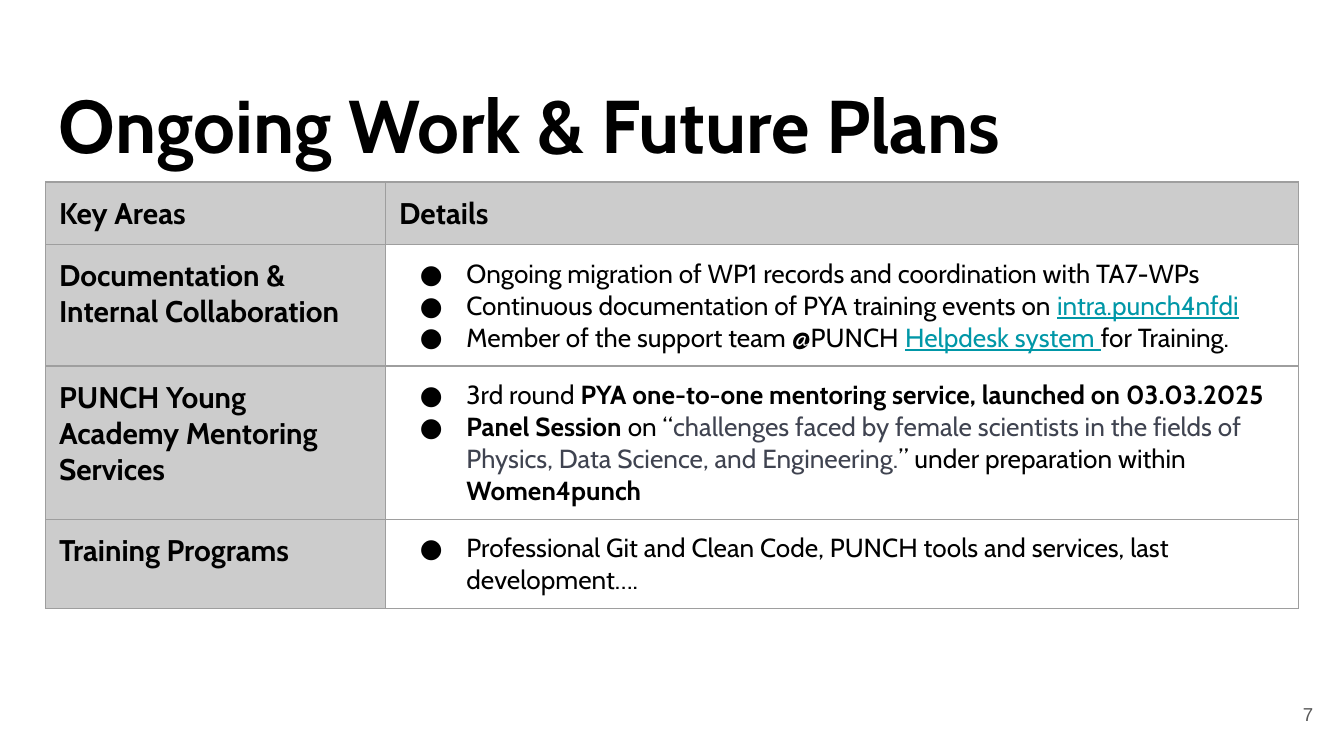
from lxml import etree
from pptx import Presentation
from pptx.dml.color import RGBColor
from pptx.enum.text import MSO_ANCHOR, PP_ALIGN
from pptx.oxml.ns import qn
from pptx.util import Pt

TOP, MIDDLE = MSO_ANCHOR.TOP, MSO_ANCHOR.MIDDLE
LEFT, RIGHT = PP_ALIGN.LEFT, PP_ALIGN.RIGHT
FONT, BLACK, GREY, TEAL, SLATE = "Cabin", "000000", "CCCCCC", "0097A7", "3F4350"
BORDER = "9E9E9E"
INSET = 7.2
BOLD = {"bold": True}
LINK = {"color": TEAL, "underline": True}
COLUMNS = [182.2, 488.9]
ROWS = [
    (33.5, "Key Areas", "Details"),
    (65, "Documentation & Internal Collaboration", [
        [("Ongoing migration of WP1 records and coordination with TA7-WPs", {})],
        [("Continuous documentation of PYA training events on ", {}),
         ("intra.punch4nfdi", LINK)],
        [("Member of the support team @PUNCH ", {}),
         ("Helpdesk system ", LINK),
         ("for Training.", {})],
    ]),
    (82, "PUNCH Young Academy Mentoring Services", [
        [("3rd round ", {}),
         ("PYA one-to-one mentoring service, launched on 03.03.2025", BOLD)],
        [("Panel Session", BOLD),
         (" on “", {}),
         ("challenges faced by female scientists in the fields of Physics, "
          "Data Science, and Engineering.", {"color": SLATE}),
         ("” under preparation within ", {}),
         ("Women4punch", BOLD)],
    ]),
    (48, "Training Programs", [
        [("Professional Git and Clean Code, PUNCH tools and services, "
          "last development….", {})],
    ]),
]


def rgb(value):
    """Return the colour for a hex string."""
    return RGBColor.from_string(value)


def add_run(p, text, size=14, color=BLACK, bold=False, underline=False, font=FONT):
    """Add formatted text to a paragraph."""
    r = p.add_run()
    r.text = text
    r.font.name, r.font.size = font, Pt(size)
    r.font.bold, r.font.underline = bold, underline
    r.font.color.rgb = rgb(color)


def add_text(s, box, text, anchor=TOP, align=LEFT, **fmt):
    """Add a one-paragraph text box."""
    tf = s.shapes.add_textbox(*map(Pt, box)).text_frame
    tf.word_wrap = True
    tf.vertical_anchor = anchor
    tf.margin_left = tf.margin_right = tf.margin_top = tf.margin_bottom = Pt(INSET)
    p = tf.paragraphs[0]
    p.alignment = align
    add_run(p, text, **fmt)


def add_bullet(p):
    """Give a paragraph a hanging round bullet."""
    pPr = p._p.get_or_add_pPr()
    pPr.set("marL", str(Pt(36)))
    pPr.set("indent", str(Pt(-25)))
    color = etree.SubElement(pPr, qn("a:buClr"))
    etree.SubElement(color, qn("a:srgbClr"), val=BLACK)
    etree.SubElement(pPr, qn("a:buSzPts"), val="1400")
    etree.SubElement(pPr, qn("a:buFont"), typeface=FONT)
    etree.SubElement(pPr, qn("a:buChar"), char="●")


def style_cell(cell, fill):
    """Set the margins, borders and fill of a cell."""
    cell.margin_left = cell.margin_right = Pt(INSET)
    cell.margin_top = cell.margin_bottom = Pt(INSET)
    tcPr = cell._tc.get_or_add_tcPr()
    for side in "LRTB":
        ln = etree.SubElement(tcPr, qn(f"a:ln{side}"), w=str(Pt(0.75)))
        solid = etree.SubElement(ln, qn("a:solidFill"))
        etree.SubElement(solid, qn("a:srgbClr"), val=BORDER)
    if fill:
        cell.fill.solid()
        cell.fill.fore_color.rgb = rgb(fill)
    else:
        cell.fill.background()


def fill_cell(cell, content):
    """Write a grey heading or a bulleted list into a cell."""
    heading = isinstance(content, str)
    style_cell(cell, GREY if heading else None)
    tf = cell.text_frame
    if heading:
        add_run(tf.paragraphs[0], content, size=16, bold=True)
        return
    for i, runs in enumerate(content):
        p = tf.add_paragraph() if i else tf.paragraphs[0]
        add_bullet(p)
        for text, fmt in runs:
            add_run(p, text, **fmt)


def add_plan_table(s, left, top):
    """Add the table of key areas and their details."""
    height = sum(row[0] for row in ROWS)
    frame = s.shapes.add_table(len(ROWS), len(COLUMNS), Pt(left), Pt(top),
                               Pt(sum(COLUMNS)), Pt(height))
    table = frame.table
    table.first_row = table.horz_banding = False
    for column, width in zip(table.columns, COLUMNS):
        column.width = Pt(width)
    for row, (row_height, *contents) in zip(table.rows, ROWS):
        row.height = Pt(row_height)
        for cell, content in zip(row.cells, contents):
            fill_cell(cell, content)


def main():
    """Build and save the slide."""
    prs = Presentation()
    prs.slide_width, prs.slide_height = Pt(720), Pt(405)
    s = prs.slides.add_slide(prs.slide_layouts[6])
    add_text(s, (24.5, 35.3, 671, 45.4), "Ongoing Work & Future Plans",
             size=40, bold=True)
    add_plan_table(s, 24.5, 97.5)
    add_text(s, (667.4, 367.2, 43.2, 31), "7", anchor=MIDDLE, align=RIGHT,
             size=10, color="595959", font="Arial")
    prs.save("out.pptx")


if __name__ == "__main__":
    main()
